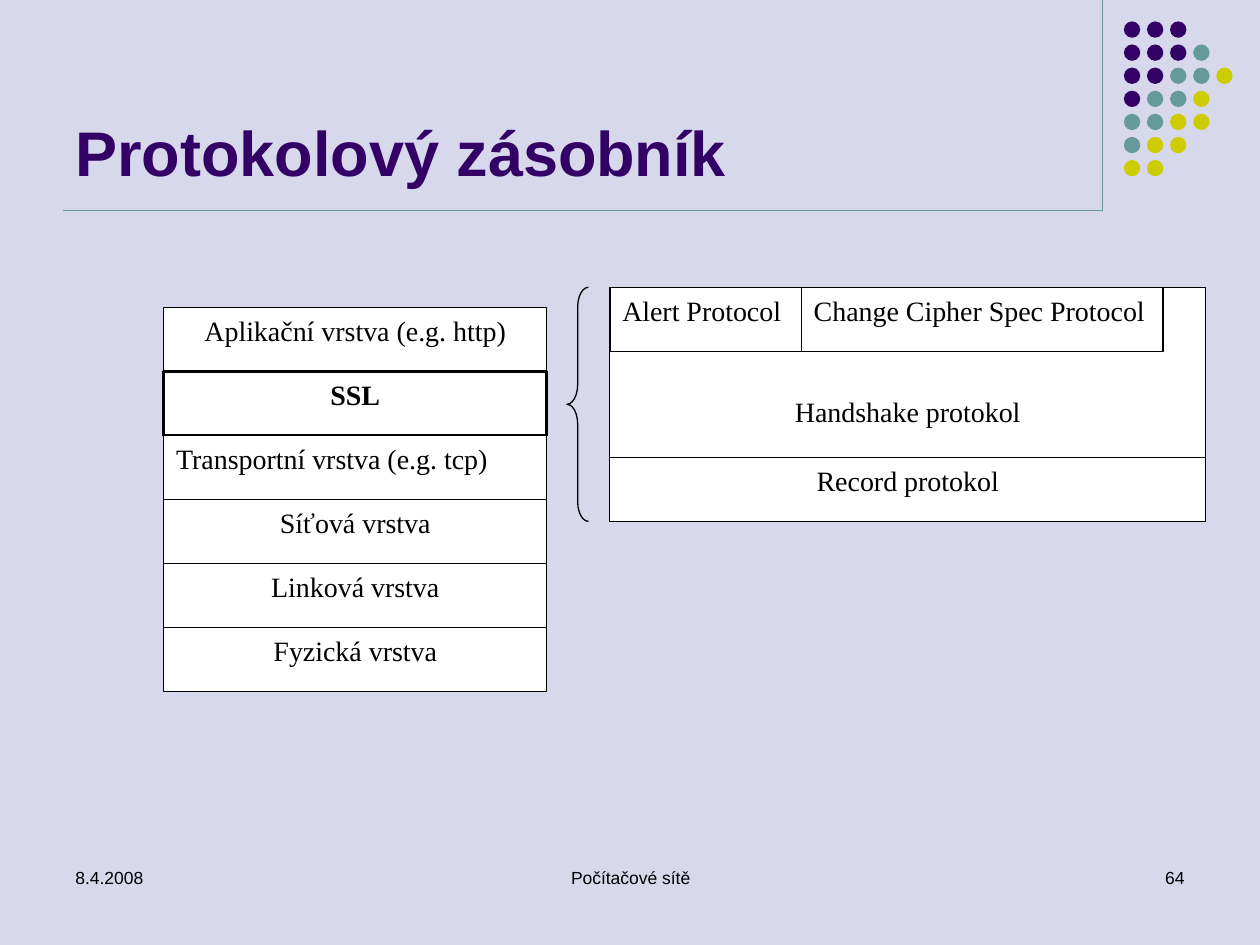
"""Build the slide showing where SSL sits in the protocol stack."""
import pptx
import pptx.dml.color
import pptx.enum.shapes
import pptx.enum.text
import pptx.oxml
import pptx.util

Inches = pptx.util.Inches
SHAPE = pptx.enum.shapes.MSO_SHAPE
ALIGN = pptx.enum.text.PP_ALIGN
ANCHOR = pptx.enum.text.MSO_ANCHOR

COLORS = {
    "background": "D8D8EC",
    "purple": "330066",
    "teal": "669999",
    "yellow": "CCCC00",
    "black": "000000",
    "white": "FFFFFF",
}
TITLE = "Protokolový zásobník"
FOOTERS = [
    ("8.4.2008", 0.5, 2.33, ALIGN.LEFT),
    ("Počítačové sítě", 3.42, 3.17, ALIGN.CENTER),
    ("64", 7.17, 2.33, ALIGN.RIGHT),
]
RULES = [(8.75, 0, 8.75, 1.67), (0.5, 1.67, 8.75, 1.67)]
DOT_ROWS = ["PPP", "PPPT", "PPTTY", "PTTY", "TTYY", "TYY", "YY"]
DOT_COLORS = {"P": "purple", "T": "teal", "Y": "yellow"}
DOT_LEFT, DOT_TOP, DOT_SIZE, DOT_PITCH = 8.92, 0.17, 0.13, 0.55 / 3

LAYERS = [
    ("Aplikační vrstva (e.g. http)", {}),
    ("SSL", {"bold": True, "weight": 1.5}),
    ("Transportní vrstva (e.g. tcp)", {"align": ALIGN.LEFT}),
    ("Síťová vrstva", {}),
    ("Linková vrstva", {}),
    ("Fyzická vrstva", {}),
]
LAYER_LEFT, LAYER_TOP, LAYER_WIDTH, ROW_HEIGHT = 1.3, 2.44, 3.04, 0.508
SSL_LEFT, SSL_TOP, SSL_WIDTH, HANDSHAKE_HEIGHT = 4.84, 2.28, 4.73, 1.35
SSL_PARTS = [
    ("Record protokol", 0, HANDSHAKE_HEIGHT, SSL_WIDTH, ROW_HEIGHT, {}),
    ("Handshake protokol", 0, 0, SSL_WIDTH, HANDSHAKE_HEIGHT, {"top_inset": 0.85}),
    ("Alert Protocol", 0, 0, 1.52, ROW_HEIGHT, {"align": ALIGN.LEFT}),
    ("Change Cipher Spec Protocol", 1.52, 0, 2.87, ROW_HEIGHT, {"align": ALIGN.LEFT}),
]


def color(name):
    return pptx.dml.color.RGBColor.from_string(COLORS[name])


def write_text(box, text, font="Arial", size=10, ink="black", bold=False,
               align=ALIGN.LEFT, anchor=ANCHOR.TOP, top_inset=0.05):
    frame = box.text_frame
    frame.word_wrap = True
    frame.vertical_anchor = anchor
    frame.margin_top = Inches(top_inset)
    para = frame.paragraphs[0]
    para.alignment = align
    span = para.add_run()
    span.text = text
    span.font.name = font
    span.font.size = pptx.util.Pt(size)
    span.font.bold = bold
    span.font.color.rgb = color(ink)


def add_shape(page, kind, bounds, fill=None, line=None, weight=0.75):
    shape = page.shapes.add_shape(kind, *map(Inches, bounds))
    shape.shadow.inherit = False
    if fill:
        shape.fill.solid()
        shape.fill.fore_color.rgb = color(fill)
    else:
        shape.fill.background()
    if line:
        shape.line.color.rgb = color(line)
        shape.line.width = pptx.util.Pt(weight)
    else:
        shape.line.fill.background()
    return shape


def add_protocol(page, text, bounds, weight=0.75, align=ALIGN.CENTER, **style):
    box = add_shape(page, SHAPE.RECTANGLE, bounds, "white", "black", weight)
    write_text(box, text, font="Times New Roman", size=16, align=align, **style)


def add_rule(page, ends):
    rule = page.shapes.add_connector(
        pptx.enum.shapes.MSO_CONNECTOR.STRAIGHT, *map(Inches, ends))
    rule.line.color.rgb = color("teal")
    rule.line.width = pptx.util.Pt(0.75)
    properties = rule._element.spPr
    properties.append(pptx.oxml.parse_xml(
        '<a:effectLst xmlns:a="http://schemas.openxmlformats.org/drawingml/2006/main"/>'))


def add_frame(page):
    for ends in RULES:
        add_rule(page, ends)
    for row, codes in enumerate(DOT_ROWS):
        for column, code in enumerate(codes):
            bounds = (DOT_LEFT + column * DOT_PITCH, DOT_TOP + row * DOT_PITCH,
                      DOT_SIZE, DOT_SIZE)
            add_shape(page, SHAPE.OVAL, bounds, DOT_COLORS[code])
    for text, left, width, align in FOOTERS:
        box = page.shapes.add_textbox(*map(Inches, (left, 6.83, width, 0.5)))
        write_text(box, text, align=align)
    box = page.shapes.add_textbox(*map(Inches, (0.5, 0.13, 8.25, 1.42)))
    write_text(box, TITLE, size=36, ink="purple", bold=True, anchor=ANCHOR.BOTTOM)


def add_stack(page):
    for index, (text, style) in enumerate(LAYERS):
        top = LAYER_TOP + index * ROW_HEIGHT
        add_protocol(page, text, (LAYER_LEFT, top, LAYER_WIDTH, ROW_HEIGHT), **style)
    for text, left, top, width, height, style in SSL_PARTS:
        bounds = (SSL_LEFT + left, SSL_TOP + top, width, height)
        add_protocol(page, text, bounds, **style)
    brace = add_shape(page, SHAPE.LEFT_BRACE,
                      (4.5, SSL_TOP, 0.17, HANDSHAKE_HEIGHT + ROW_HEIGHT), line="black")
    brace.adjustments[0] = 0.92
    brace.adjustments[1] = 0.5


def main():
    deck = pptx.Presentation()
    deck.slide_width, deck.slide_height = Inches(10), Inches(7.5)
    page = deck.slides.add_slide(deck.slide_layouts[6])
    page.background.fill.solid()
    page.background.fill.fore_color.rgb = color("background")
    add_frame(page)
    add_stack(page)
    deck.save("out.pptx")


if __name__ == "__main__":
    main()
